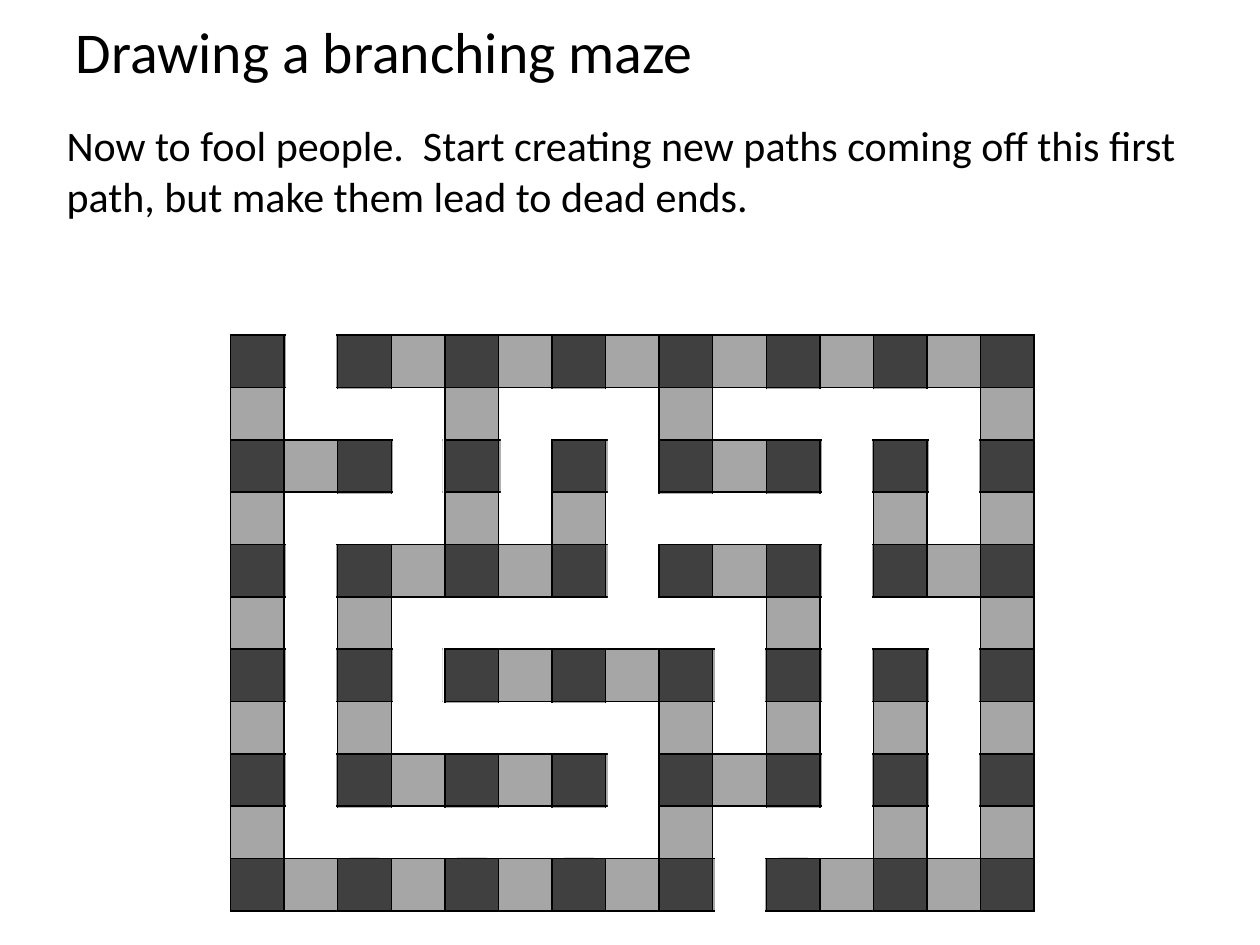
from lxml import etree
from pptx import Presentation
from pptx.dml.color import RGBColor
from pptx.enum import shapes, text
from pptx.oxml.ns import qn
from pptx.util import Inches, Pt

# Content
TITLE = "Drawing a branching maze"
BODY = ("Now to fool people.  Start creating new paths coming off this first path, "
        "but make them lead to dead ends.")
ROWS, COLS = 11, 15
# Columns where a wall is opened, one tuple per grid row
OPENINGS = [
    (1,),
    (2, 6, 10, 12),
    (3, 5, 7, 11, 13),
    (2, 8, 10),
    (1, 7, 11),
    (4, 6, 8, 12),
    (1, 3, 9, 11, 13),
    (4, 6),
    (1, 7, 11, 13),
    (2, 4, 6, 10),
    (9,),
]

THEME = {
    "font": "Calibri", "title": 33, "body": 24,
    "ink": "000000", "post": "404040", "wall": "A6A6A6", "path": "FFFFFF",
}

# Geometry in inches
LEFT, TOP, WIDTH, HEIGHT = 1.83, 2.66, 6.38, 4.57
CELL_W, CELL_H = WIDTH / COLS, HEIGHT / ROWS
COVER_W, COVER_H = 0.48, 0.39


def color(name):
    return RGBColor.from_string(THEME[name])


def write(tf, words, size, spacing=None, anchor=text.MSO_ANCHOR.TOP,
          fit=text.MSO_AUTO_SIZE.NONE):
    tf.word_wrap = True
    tf.auto_size = fit
    tf.vertical_anchor = anchor
    p = tf.paragraphs[0]
    p.alignment = text.PP_ALIGN.LEFT
    p.line_spacing = spacing
    r = p.add_run()
    r.text = words
    r.font.name = THEME["font"]
    r.font.size = Pt(THEME[size])
    r.font.color.rgb = color("ink")


def add_borders(cell):
    """Black 1 pt lines go ahead of the fill in the cell properties."""
    tc_pr = cell._tc.get_or_add_tcPr()
    for i, side in enumerate(("a:lnL", "a:lnR", "a:lnT", "a:lnB")):
        ln = etree.Element(qn(side), w=str(Pt(1)))
        fill = etree.SubElement(ln, qn("a:solidFill"))
        etree.SubElement(fill, qn("a:srgbClr"), val=THEME["ink"])
        tc_pr.insert(i, ln)


def cell_color(row, col):
    """Posts on even/even cells, paths on odd/odd cells, walls between."""
    return ("post", "wall", "path")[row % 2 + col % 2]


def add_grid(slide):
    table = slide.shapes.add_table(ROWS, COLS, Inches(LEFT), Inches(TOP),
                                   Inches(WIDTH), Inches(HEIGHT)).table
    table.first_row = table.horz_banding = False
    for column in table.columns:
        column.width = Inches(CELL_W)
    for r, row in enumerate(table.rows):
        row.height = Inches(CELL_H)
        for c, cell in enumerate(row.cells):
            cell.margin_top = cell.margin_bottom = 0
            cell.fill.solid()
            cell.fill.fore_color.rgb = color(cell_color(r, c))
            add_borders(cell)


def add_opening(slide, row, col):
    x = LEFT + (col + 0.5) * CELL_W - COVER_W / 2
    y = TOP + (row + 0.5) * CELL_H - COVER_H / 2
    sp = slide.shapes.add_shape(shapes.MSO_SHAPE.RECTANGLE, Inches(x), Inches(y),
                                Inches(COVER_W), Inches(COVER_H))
    sp.rotation = 0 if row % 2 else 90
    sp.shadow.inherit = False
    sp.fill.solid()
    sp.fill.fore_color.rgb = color("path")
    sp.line.color.rgb = color("path")
    sp.line.width = Pt(0.25)


def main():
    prs = Presentation()
    prs.slide_width, prs.slide_height = Inches(10), Inches(7.5)
    slide = prs.slides.add_slide(prs.slide_layouts[5])

    # Title and instruction
    title = slide.shapes.title
    title.left, title.top = Inches(0.5), Inches(-0.19)
    title.width, title.height = Inches(9), Inches(1.25)
    write(title.text_frame, TITLE, "title", spacing=0.9,
          anchor=text.MSO_ANCHOR.MIDDLE)
    box = slide.shapes.add_textbox(Inches(0.43), Inches(0.9),
                                   Inches(9.13), Inches(0.91))
    write(box.text_frame, BODY, "body", fit=text.MSO_AUTO_SIZE.SHAPE_TO_FIT_TEXT)

    # Maze: full grid, then the openings over it
    add_grid(slide)
    for row, columns in enumerate(OPENINGS):
        for col in columns:
            add_opening(slide, row, col)

    prs.save("out.pptx")


if __name__ == "__main__":
    main()
